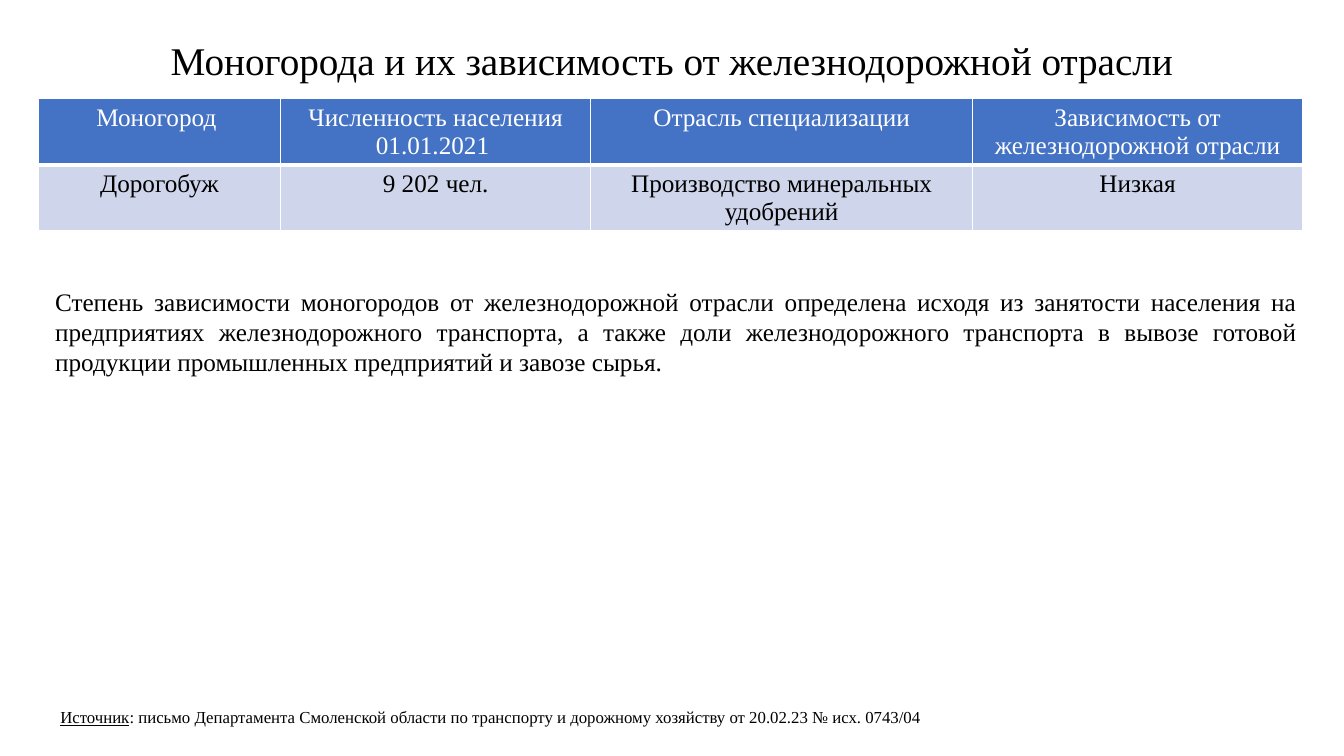
from dataclasses import dataclass

from lxml import etree
from pptx import Presentation
from pptx.dml.color import RGBColor
from pptx.enum.text import MSO_ANCHOR, MSO_AUTO_SIZE, PP_ALIGN
from pptx.oxml.ns import qn
from pptx.util import Cm, Pt

CENTER, LEFT, JUSTIFY = PP_ALIGN.CENTER, PP_ALIGN.LEFT, PP_ALIGN.JUSTIFY
MIDDLE = MSO_ANCHOR.MIDDLE
GROW, FIXED = MSO_AUTO_SIZE.SHAPE_TO_FIT_TEXT, MSO_AUTO_SIZE.NONE
TITLE_ONLY = 5

FONT = "Times New Roman"
BLACK, WHITE = "000000", "FFFFFF"
HEADER_BLUE, ROW_BLUE = "4472C4", "CFD5EA"
THIN, THICK = 1, 3


@dataclass(frozen=True)
class Run:
    text: str
    size: float = 18
    color: str = BLACK
    underline: bool = False


@dataclass(frozen=True)
class TextBlock:
    left: float
    top: float
    width: float
    height: float
    align: PP_ALIGN
    runs: tuple[Run, ...]


@dataclass(frozen=True)
class RowStyle:
    fill: str
    color: str
    top_line: float
    bottom_line: float


TITLE = Run("Моногорода и их зависимость от железнодорожной отрасли", 28)

COLUMN_WIDTHS = (6.1, 7.82, 9.62, 8.32)
ROW_HEIGHT = 1.66
TOWN_ROWS = (
    ("Моногород ", "Численность населения\n01.01.2021 ",
     "Отрасль специализации", "Зависимость от железнодорожной отрасли"),
    ("Дорогобуж", "9 202 чел.", "Производство минеральных удобрений", "Низкая"),
)
ROW_STYLES = (
    RowStyle(HEADER_BLUE, WHITE, THIN, THICK),
    RowStyle(ROW_BLUE, BLACK, THICK, THIN),
)

SOURCE_NOTE = TextBlock(1.27, 17.68, 31.57, 0.76, LEFT, (
    Run("Источник", 12, underline=True),
    Run(": письмо Департамента Смоленской области по транспорту и дорожному "
        "хозяйству от 20.02.23 № исх. 0743/04", 12),
))
METHOD_NOTE = TextBlock(1.14, 7.09, 31.8, 2.57, JUSTIFY, (
    Run("Степень зависимости моногородов от железнодорожной отрасли определена "
        "исходя из занятости населения на предприятиях железнодорожного "
        "транспорта, а также доли железнодорожного транспорта в вывозе готовой "
        "продукции промышленных предприятий и завозе сырья. "),
))


def rgb(value: str) -> RGBColor:
    return RGBColor.from_string(value)


def add_run(paragraph, run: Run) -> None:
    piece = paragraph.add_run()
    piece.text = run.text
    font = piece.font
    font.name, font.size = FONT, Pt(run.size)
    font.bold, font.underline = False, run.underline
    font.color.rgb = rgb(run.color)


def add_border(cell, side: str, width: float) -> None:
    properties = cell._tc.get_or_add_tcPr()
    line = etree.SubElement(properties, qn(f"a:{side}"), w=str(Pt(width)))
    fill = etree.SubElement(line, qn("a:solidFill"))
    etree.SubElement(fill, qn("a:srgbClr"), val=WHITE)


def fill_cell(cell, text: str, style: RowStyle) -> None:
    borders = {"lnL": THIN, "lnR": THIN,
               "lnT": style.top_line, "lnB": style.bottom_line}
    for side, width in borders.items():
        add_border(cell, side, width)
    cell.fill.solid()
    cell.fill.fore_color.rgb = rgb(style.fill)
    frame = cell.text_frame
    for index, line in enumerate(text.split("\n")):
        paragraph = frame.add_paragraph() if index else frame.paragraphs[0]
        paragraph.alignment = CENTER
        add_run(paragraph, Run(line, color=style.color))


def set_title(slide) -> None:
    title = slide.shapes.title
    title.left, title.top = Cm(2.03), Cm(0.91)
    title.width, title.height = Cm(29.8), Cm(1.37)
    frame = title.text_frame
    frame.vertical_anchor, frame.auto_size = MIDDLE, FIXED
    frame.word_wrap = True
    paragraph = frame.paragraphs[0]
    paragraph.alignment, paragraph.line_spacing = CENTER, 0.9
    add_run(paragraph, TITLE)


def add_towns_table(slide) -> None:
    towns = slide.shapes.add_table(
        len(TOWN_ROWS), len(COLUMN_WIDTHS), Cm(0.97), Cm(2.49),
        Cm(sum(COLUMN_WIDTHS)), Cm(ROW_HEIGHT * len(TOWN_ROWS))).table
    for column, width in zip(towns.columns, COLUMN_WIDTHS):
        column.width = Cm(width)
    for row, texts, style in zip(towns.rows, TOWN_ROWS, ROW_STYLES):
        row.height = Cm(ROW_HEIGHT)
        for cell, text in zip(row.cells, texts):
            fill_cell(cell, text, style)


def add_text_block(slide, block: TextBlock) -> None:
    frame = slide.shapes.add_textbox(
        Cm(block.left), Cm(block.top), Cm(block.width), Cm(block.height)).text_frame
    frame.word_wrap, frame.auto_size = True, GROW
    paragraph = frame.paragraphs[0]
    paragraph.alignment = block.align
    for run in block.runs:
        add_run(paragraph, run)


def main() -> None:
    # Slide
    presentation = Presentation()
    presentation.slide_width, presentation.slide_height = Cm(33.87), Cm(19.05)
    slide = presentation.slides.add_slide(presentation.slide_layouts[TITLE_ONLY])

    # Title and table
    set_title(slide)
    add_towns_table(slide)

    # Source and explanation
    for block in (SOURCE_NOTE, METHOD_NOTE):
        add_text_block(slide, block)

    presentation.save("out.pptx")


if __name__ == "__main__":
    main()
